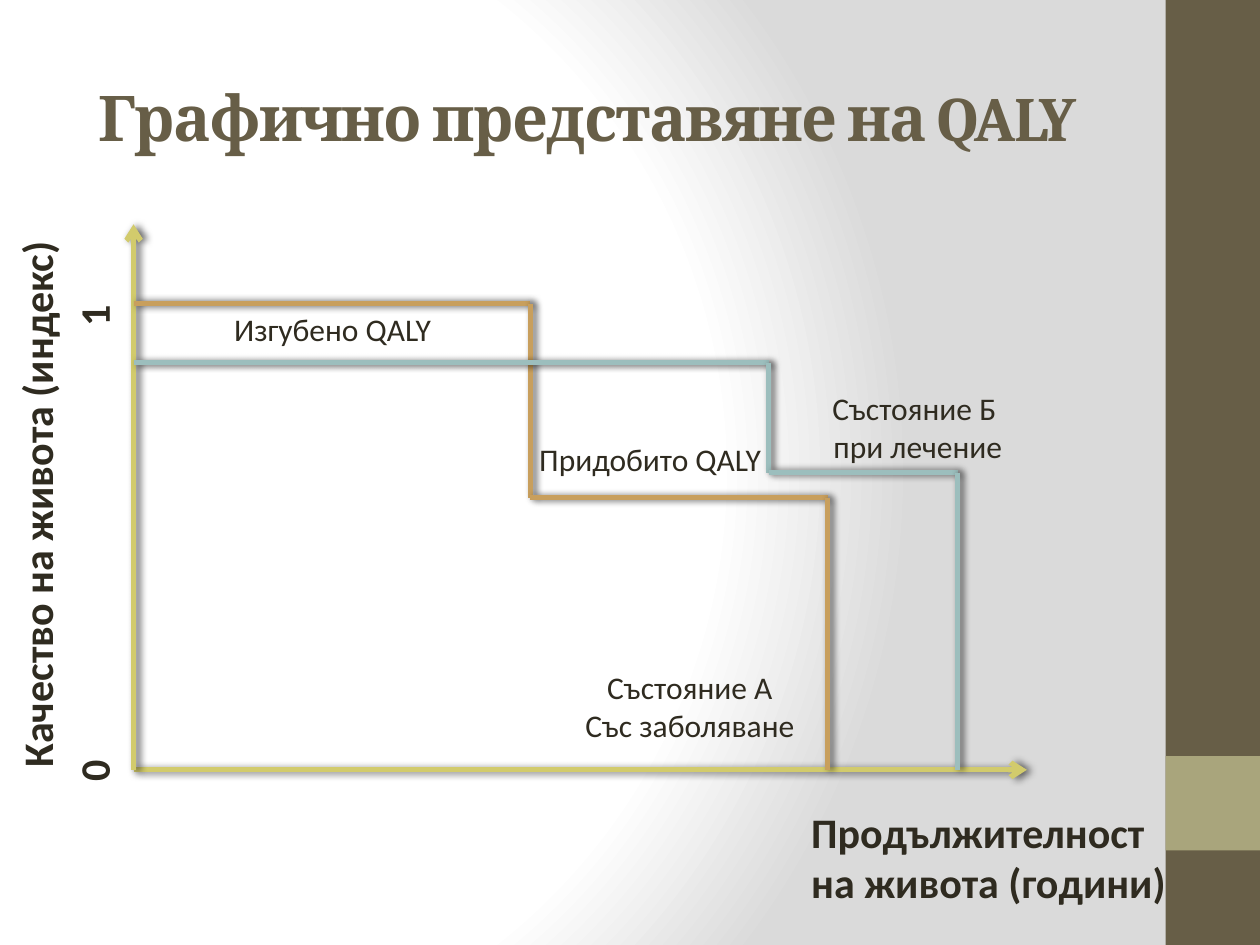
"""Build a slide that charts quality-adjusted life years (QALY)."""
from itertools import pairwise

from pptx import Presentation
from pptx.dml.color import RGBColor
from pptx.enum.shapes import MSO_CONNECTOR, MSO_SHAPE
from pptx.enum.text import MSO_ANCHOR, MSO_AUTO_SIZE, PP_ALIGN
from pptx.oxml import parse_xml
from pptx.oxml.ns import nsdecls
from pptx.util import Inches, Pt

STRAIGHT, RECT = MSO_CONNECTOR.STRAIGHT, MSO_SHAPE.RECTANGLE
MIDDLE, GROW = MSO_ANCHOR.MIDDLE, MSO_AUTO_SIZE.SHAPE_TO_FIT_TEXT
LEFT, CENTER, RIGHT = PP_ALIGN.LEFT, PP_ALIGN.CENTER, PP_ALIGN.RIGHT
BROWN = RGBColor(0x67, 0x5E, 0x47)
OLIVE = RGBColor(0xA9, 0xA5, 0x7C)
INK = RGBColor(0x2F, 0x2B, 0x20)
YELLOW = RGBColor(0xD2, 0xCB, 0x6C)
ORANGE = RGBColor(0xC8, 0x9F, 0x5D)
TEAL = RGBColor(0x9C, 0xBE, 0xBD)

TITLE = "Графично представяне на QALY"
BANDS = [((9.25, 0, 0.75, 7.5), BROWN), ((9.25, 6, 0.75, 0.75), OLIVE)]
X0, Y0 = 1.06, 6.11
AXIS_ENDS = [(8.15, Y0), (X0, 1.78)]
CURVES = [
    (ORANGE, [(X0, 2.41), (4.21, 2.41), (4.21, 3.95), (6.57, 3.95), (6.57, Y0)]),
    (TEAL, [(X0, 2.88), (6.1, 2.88), (6.1, 3.75), (7.6, 3.75), (7.6, Y0)]),
]
AXIS_LABELS = [
    ((6.34, 6.35, 3.07, 0.91), 0, LEFT, ["Продължителност", "на живота (години)"]),
    ((-2.21, 4.07, 5, 0.5), 270, RIGHT, ["Качество на живота (индекс)"]),
]
SCALE_BOX, SCALE = (-1.44, 4.23, 4.36, 0.5), "0\t1"
SCALE_INSET, SCALE_TAB = 0.46, 3.78
AREA_LABELS = [
    ((1.3, 2.41, 2.68, 0.4), ["Изгубено QALY"]),
    ((3.82, 3.44, 2.68, 0.4), ["Придобито QALY"]),
    ((6.26, 3.04, 2.05, 0.71), ["Състояние Б ", "при лечение"]),
    ((4.45, 5.25, 2.05, 0.71), ["Състояние А", "Със заболяване"]),
]

BACKGROUND = f"""<p:bg {nsdecls('p', 'a')}><p:bgPr><a:gradFill rotWithShape="1"><a:gsLst>
<a:gs pos="0"><a:srgbClr val="FFFFFF"/></a:gs><a:gs pos="75000"><a:srgbClr val="FFFFFF"/></a:gs>
<a:gs pos="100000"><a:srgbClr val="DADADA"/></a:gs></a:gsLst><a:path path="circle">
<a:fillToRect l="20000" t="50000" r="100000" b="50000"/></a:path></a:gradFill>
<a:effectLst/></p:bgPr></p:bg>"""
SHADOW = f"""<a:effectLst {nsdecls('a')}><a:outerShdw blurRad="50800" dist="25400" dir="0">
<a:srgbClr val="000000"><a:alpha val="60000"/></a:srgbClr></a:outerShdw></a:effectLst>"""
ARROW = f"<a:tailEnd {nsdecls('a')} type=\"arrow\"/>"


def inches(values):
    return [Inches(v) for v in values]


def add_run(p, text, size, color, font="Calibri", bold=False):
    r = p.add_run()
    r.text = text
    r.font.name, r.font.size, r.font.bold = font, Pt(size), bold
    r.font.color.rgb = color
    return r


def add_line(s, start, end, color, arrow=False):
    line = s.shapes.add_connector(STRAIGHT, *inches(start + end))
    line.line.color.rgb, line.line.width = color, Pt(3)
    if arrow:
        line.line._get_or_add_ln().append(parse_xml(ARROW))
    line._element.spPr.append(parse_xml(SHADOW))


def add_label(s, box, lines, size, align, bold=False, rotation=0):
    sp = s.shapes.add_textbox(*inches(box))
    sp.rotation = rotation
    tf = sp.text_frame
    tf.word_wrap, tf.auto_size = True, GROW
    for i, text in enumerate(lines):
        p = tf.add_paragraph() if i else tf.paragraphs[0]
        p.alignment = align
        add_run(p, text, size, INK, bold=bold)
    return tf


def main():
    prs = Presentation()
    prs.slide_width, prs.slide_height = Inches(10), Inches(7.5)
    s = prs.slides.add_slide(prs.slide_layouts[5])
    s._element.cSld.insert(0, parse_xml(BACKGROUND))

    title = s.shapes.title
    title.left, title.top, title.width, title.height = inches((0.5, 0.3, 8.33, 1.25))
    title.text_frame.vertical_anchor = MIDDLE
    p = title.text_frame.paragraphs[0]
    p.alignment = CENTER
    r = add_run(p, TITLE, 36, BROWN, "Cambria", True)
    r.font._element.set("spc", "-100")

    for box, color in BANDS:
        sp = s.shapes.add_shape(RECT, *inches(box))
        sp.shadow.inherit = False
        sp.fill.solid()
        sp.fill.fore_color.rgb = color
        sp.line.fill.background()

    for end in AXIS_ENDS:
        add_line(s, (X0, Y0), end, YELLOW, arrow=True)
    for color, points in CURVES:
        for start, end in pairwise(points):
            add_line(s, start, end, color)

    for box, rotation, align, lines in AXIS_LABELS:
        add_label(s, box, lines, 24, align, True, rotation)
    tf = add_label(s, SCALE_BOX, [SCALE], 24, LEFT, True, 270)
    tf.margin_left = Inches(SCALE_INSET)
    tabs = f"<a:tabLst {nsdecls('a')}><a:tab pos=\"{Inches(SCALE_TAB)}\" algn=\"r\"/></a:tabLst>"
    tf.paragraphs[0]._p.get_or_add_pPr().append(parse_xml(tabs))
    for box, lines in AREA_LABELS:
        add_label(s, box, lines, 18, CENTER)

    prs.save("out.pptx")


if __name__ == "__main__":
    main()
